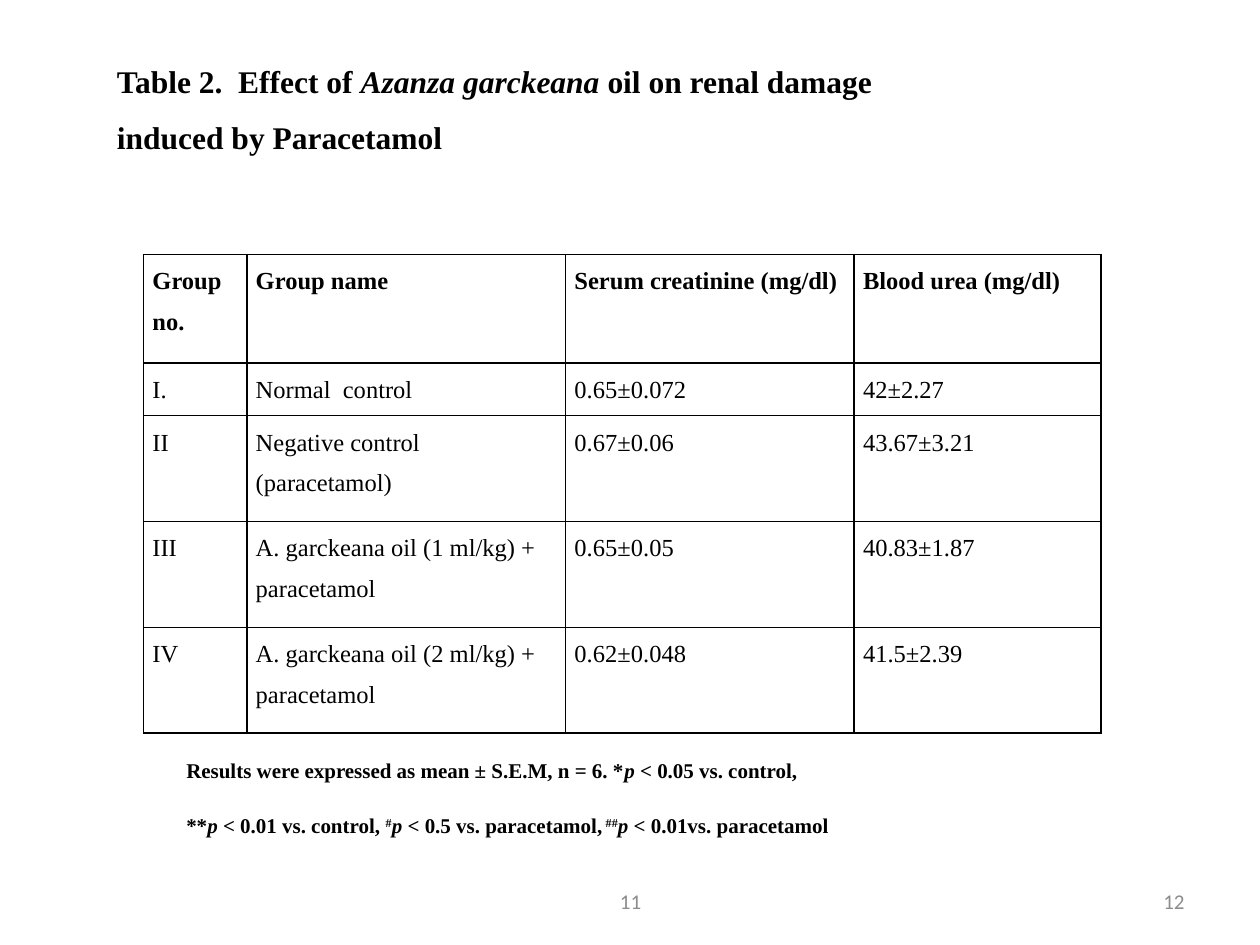
from lxml.etree import SubElement
from pptx import Presentation
from pptx.dml.color import RGBColor
from pptx.enum.text import MSO_ANCHOR, PP_ALIGN
from pptx.oxml.ns import qn
from pptx.util import Inches, Pt

COLORS = {"text": "000000", "number": "8C8C8C", "border": "000000"}
SERIF, SANS = "Times New Roman", "Calibri"

TITLE = [[
    ("Table 2.  Effect of ", ""),
    ("Azanza garckeana ", "italic"),
    ("oil on renal damage induced by Paracetamol", ""),
]]
FOOTNOTE = [
    [
        ("Results were expressed as mean ± S.E.M, n = 6. *", ""),
        ("p ", "italic"),
        ("< 0.05 vs. control,", ""),
    ],
    [
        ("**", ""),
        ("p ", "italic"),
        ("< 0.01 vs. control, ", ""),
        ("#", "superscript"),
        ("p ", "italic"),
        ("< 0.5 vs. paracetamol,", ""),
        (" ##", "superscript"),
        ("p ", "italic"),
        ("< 0.01vs. paracetamol", ""),
    ],
]
RENAL_ROWS = [
    ["Group\nno.", "Group name", "Serum creatinine (mg/dl)", "Blood urea (mg/dl)"],
    ["I.", "Normal  control", "0.65±0.072", "42±2.27"],
    ["II", "Negative control (paracetamol)", "0.67±0.06", "43.67±3.21"],
    ["III", "A. garckeana oil (1 ml/kg) + paracetamol", "0.65±0.05", "40.83±1.87"],
    ["IV", "A. garckeana oil (2 ml/kg) + paracetamol", "0.62±0.048", "41.5±2.39"],
]
COLUMN_WIDTHS = [0.82, 2.53, 2.29, 1.96]
ROW_HEIGHTS = [0.86, 0.42, 0.84, 0.84, 0.84]


class SlideBuilder:
    """Holds the style and the current slide, and adds each kind of element."""

    def __init__(self, slide):
        self.slide = slide
        self.line_spacing = 1.5

    def style_font(self, font, size, name=SERIF, color="text", bold=False):
        font.name = name
        font.size = Pt(size)
        font.bold = bold
        font.color.rgb = RGBColor.from_string(COLORS[color])

    def add_box(self, left, top, width, height):
        shape = self.slide.shapes.add_textbox(
            Inches(left), Inches(top), Inches(width), Inches(height)
        )
        shape.text_frame.word_wrap = True
        return shape.text_frame

    def add_rich_text(self, left, top, width, height, paragraphs, size):
        text_frame = self.add_box(left, top, width, height)
        for index, parts in enumerate(paragraphs):
            paragraph = text_frame.add_paragraph() if index else text_frame.paragraphs[0]
            paragraph.line_spacing = self.line_spacing
            paragraph.space_after = Pt(10)
            for text, variant in parts:
                run = paragraph.add_run()
                run.text = text
                self.style_font(run.font, size, bold=True)
                if variant == "italic":
                    run.font.italic = True
                elif variant == "superscript":
                    run.font._element.set("baseline", "30000")

    def add_number(self, left, top, width, height, text, alignment):
        text_frame = self.add_box(left, top, width, height)
        text_frame.vertical_anchor = MSO_ANCHOR.MIDDLE
        text_frame.text = text
        paragraph = text_frame.paragraphs[0]
        paragraph.alignment = alignment
        self.style_font(paragraph.runs[0].font, 12, SANS, "number")

    def add_borders(self, cell):
        properties = cell._tc.get_or_add_tcPr()
        for position, side in enumerate(("lnL", "lnR", "lnT", "lnB")):
            line = SubElement(properties, qn(f"a:{side}"), w=str(Pt(1)))
            fill = SubElement(line, qn("a:solidFill"))
            SubElement(fill, qn("a:srgbClr"), val=COLORS["border"])
            properties.insert(position, line)

    def add_table(self, left, top, rows, widths, heights, size):
        table = self.slide.shapes.add_table(
            len(rows), len(widths), Inches(left), Inches(top),
            Inches(sum(widths)), Inches(sum(heights)),
        ).table
        for column, width in zip(table.columns, widths):
            column.width = Inches(width)
        for row_index, (row, height) in enumerate(zip(table.rows, heights)):
            row.height = Inches(height)
            for cell, text in zip(row.cells, rows[row_index]):
                cell.text_frame.text = text
                cell.margin_left = cell.margin_right = Inches(0.07)
                cell.margin_top = cell.margin_bottom = 0
                cell.fill.background()
                self.add_borders(cell)
                for paragraph in cell.text_frame.paragraphs:
                    paragraph.line_spacing = self.line_spacing
                    for run in paragraph.runs:
                        self.style_font(run.font, size, bold=row_index == 0)


def main():
    presentation = Presentation()
    presentation.slide_width = Inches(10)
    presentation.slide_height = Inches(7.5)
    builder = SlideBuilder(presentation.slides.add_slide(presentation.slide_layouts[6]))
    builder.add_rich_text(0.83, 0.29, 6.67, 0.96, TITLE, 18)
    builder.add_table(1.14, 2.02, RENAL_ROWS, COLUMN_WIDTHS, ROW_HEIGHTS, 14)
    builder.add_rich_text(1.38, 5.86, 6.12, 1.49, FOOTNOTE, 12)
    builder.add_number(7.17, 6.95, 2.33, 0.4, "12", PP_ALIGN.RIGHT)
    builder.add_number(3.42, 6.95, 3.17, 0.4, "11", PP_ALIGN.CENTER)
    presentation.save("out.pptx")


if __name__ == "__main__":
    main()
